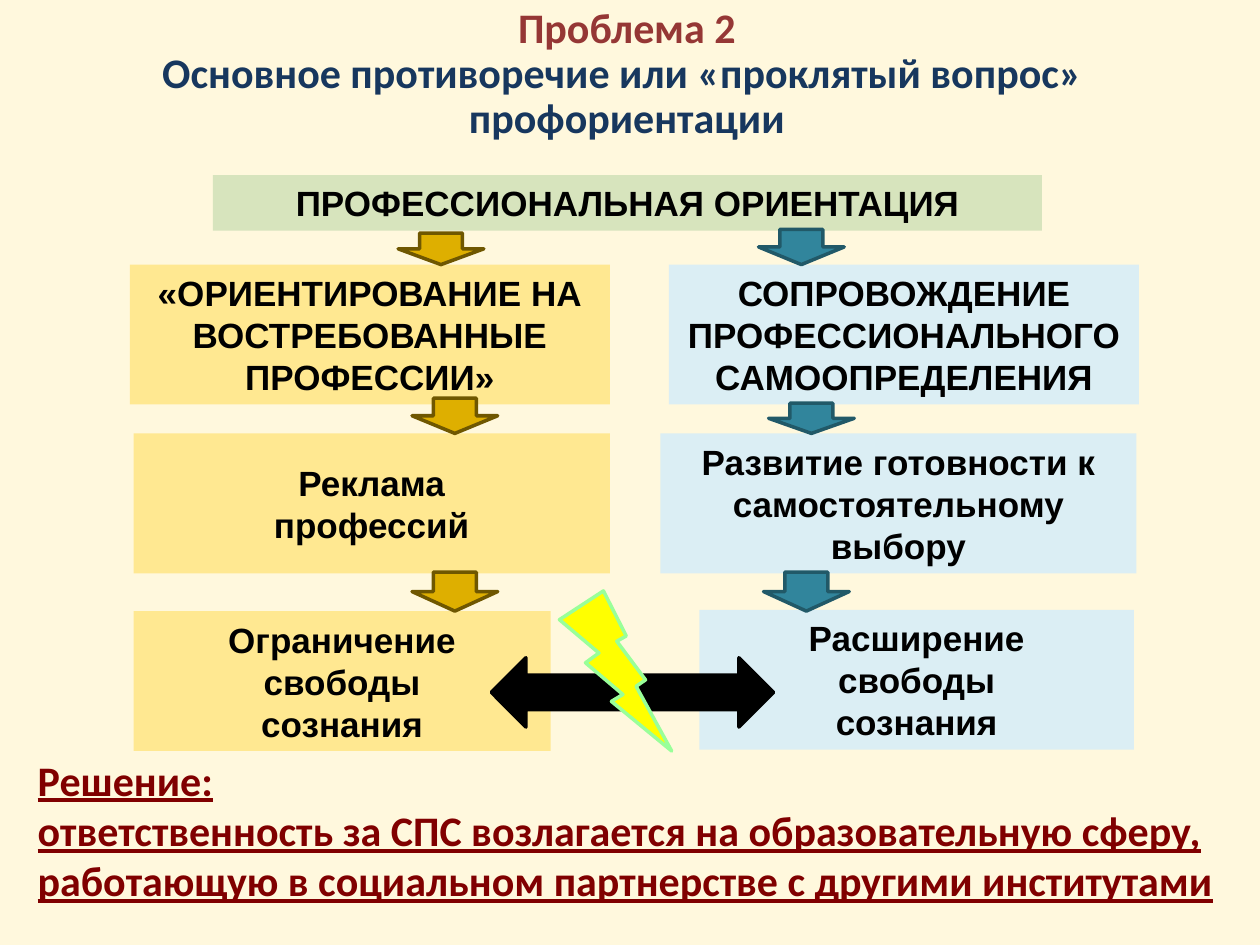
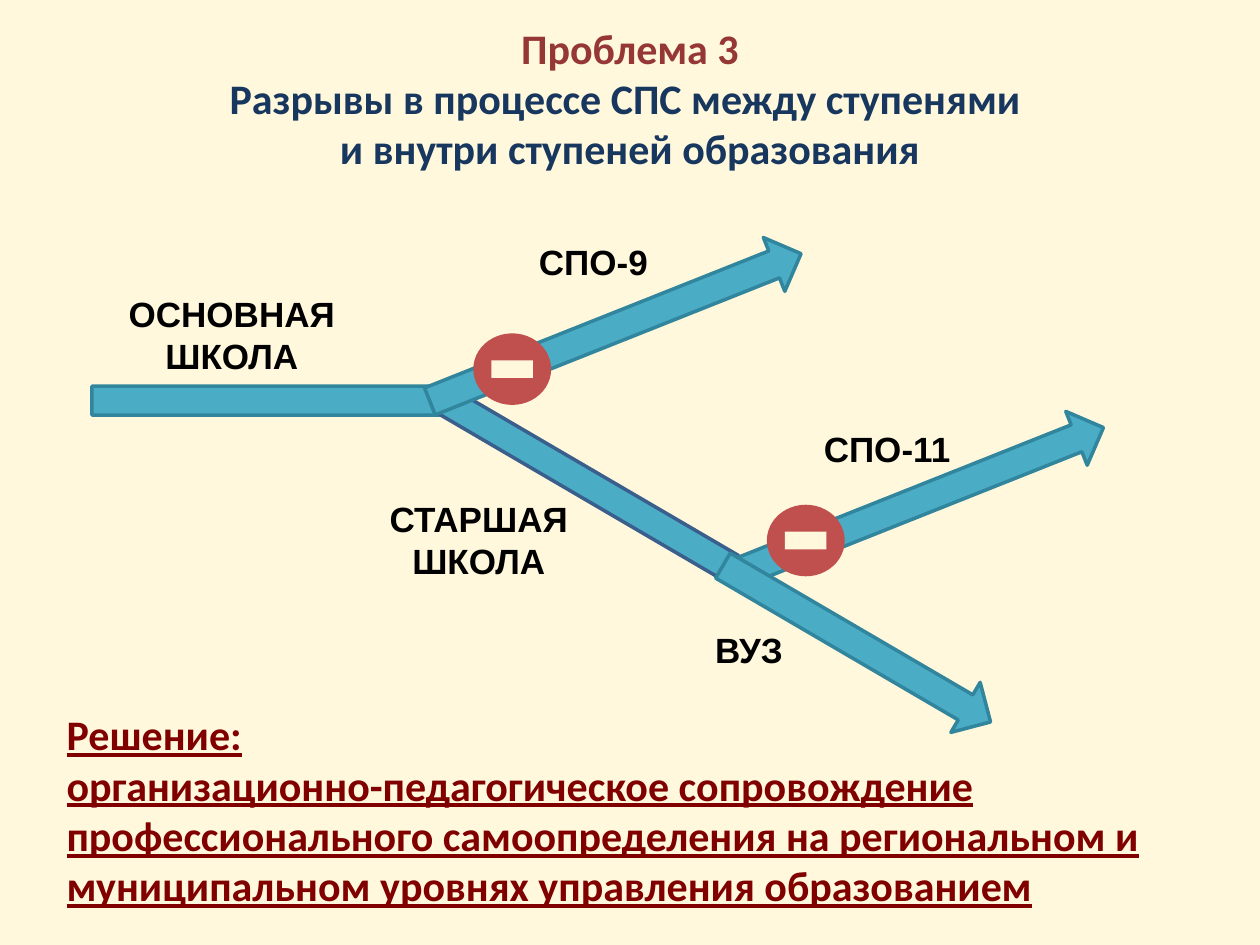
"""Build two slides on the contradictions and gaps in career guidance."""
import typing

import pptx
import pptx.dml.color
import pptx.enum.shapes
import pptx.enum.text
import pptx.util

Inches = pptx.util.Inches
Pt = pptx.util.Pt
SHAPE = pptx.enum.shapes.MSO_SHAPE
ALIGN = pptx.enum.text.PP_ALIGN
ANCHOR = pptx.enum.text.MSO_ANCHOR

CREAM, BLACK = "FFF8DD", "000000"
HEADING_RED, HEADING_NAVY, SOLUTION_RED = "953735", "17375E", "800000"
GREEN, YELLOW, PALE_BLUE = "D7E4BD", "FFE891", "DBEEF4"
GOLD, GOLD_EDGE = "DEAF00", "6F5700"
TEAL, TEAL_EDGE = "31859C", "215968"
ROAD, ROAD_EDGE, STOP_RED = "4BACC6", "31859C", "C0504D"


class Area(typing.NamedTuple):
    """Place and size in inches."""
    left: float
    top: float
    width: float
    height: float


class Style(typing.NamedTuple):
    """Look of a text."""
    font: str
    size: float
    colours: tuple[str, ...]
    align: ALIGN = ALIGN.CENTER
    anchor: ANCHOR = ANCHOR.MIDDLE
    underline: bool = False
    spacing: float = 1.0


class Block(typing.NamedTuple):
    """A filled box with a caption."""
    area: Area
    fill: str
    text: str


class Label(typing.NamedTuple):
    """A caption beside a road."""
    area: Area
    text: str


class Road(typing.NamedTuple):
    """An educational route drawn as a turned arrow."""
    left: float
    top: float
    length: float
    angle: float
    edge: str = ROAD_EDGE


CAPTION = Style("Arial", 20, (BLACK,))
ROAD_CAPTION = CAPTION._replace(anchor=ANCHOR.TOP)
HEADING = Style("Calibri", 24, (HEADING_RED, HEADING_NAVY))
SOLUTION = Style("Calibri", 24, (SOLUTION_RED,), ALIGN.LEFT, underline=True)

STAGES = (
    Block(Area(1.69, 1.39, 6.58, 0.44), GREEN, "ПРОФЕССИОНАЛЬНАЯ ОРИЕНТАЦИЯ"),
    Block(Area(1.03, 2.1, 3.81, 1.11), YELLOW, "«ОРИЕНТИРОВАНИЕ НА ВОСТРЕБОВАННЫЕ ПРОФЕССИИ»"),
    Block(Area(5.31, 2.1, 3.73, 1.11), PALE_BLUE, "СОПРОВОЖДЕНИЕ ПРОФЕССИОНАЛЬНОГО САМООПРЕДЕЛЕНИЯ"),
    Block(Area(1.06, 3.44, 3.78, 1.11), YELLOW, "Реклама\nпрофессий"),
    Block(Area(5.24, 3.44, 3.78, 1.11), PALE_BLUE, "Развитие готовности к самостоятельному выбору"),
    Block(Area(1.06, 4.85, 3.31, 1.11), YELLOW, "Ограничение\nсвободы\nсознания"),
    Block(Area(5.55, 4.84, 3.45, 1.11), PALE_BLUE, "Расширение\nсвободы\nсознания"),
)
STEP_WIDTH = 0.68
GOLD_STEPS = ((3.16, 1.85, 0.25), (3.27, 3.16, 0.28), (3.27, 4.54, 0.31))
TEAL_STEPS = ((6.02, 1.82, 0.28), (6.1, 3.2, 0.24), (6.06, 4.54, 0.31))

ROAD_HEIGHT = 0.46
UPHILL, DOWNHILL = 338.3, 30.3
BASIC_SCHOOL = Road(0.73, 2.95, 3.17, 0)
SENIOR_SCHOOL = Road(3.28, 3.73, 3.17, DOWNHILL, "3A5F8C")
COLLEGE_AFTER_9 = Road(3.3, 2.37, 3.17, UPHILL)
COLLEGE_AFTER_11 = Road(5.7, 3.75, 3.17, UPHILL)
UNIVERSITY = Road(5.57, 4.88, 2.46, DOWNHILL)
ROAD_LABELS = (
    Label(Area(0.84, 2.27, 2, 0.71), "ОСНОВНАЯ ШКОЛА"),
    Label(Area(2.8, 3.9, 2, 0.71), "СТАРШАЯ ШКОЛА"),
    Label(Area(3.71, 1.86, 2, 0.44), "СПО-9"),
    Label(Area(6.04, 3.34, 2, 0.4), "СПО-11"),
    Label(Area(5.41, 4.94, 1.07, 0.4), "ВУЗ"),
)
BARRIERS = ((3.77, 2.66), (6.1, 4.02))


def rgb(colour: str) -> pptx.dml.color.RGBColor:
    """Turn a hex string into a colour."""
    return pptx.dml.color.RGBColor.from_string(colour)


def write(frame, text: str, style: Style) -> None:
    """Fill a frame; the first run takes the first colour, later ones the last."""
    frame.word_wrap = True
    frame.vertical_anchor = style.anchor
    frame.text = text
    for paragraph in frame.paragraphs:
        paragraph.alignment = style.align
        paragraph.line_spacing = style.spacing
        for index, run in enumerate(paragraph.runs):
            run.font.name = style.font
            run.font.size = Pt(style.size)
            run.font.bold = True
            run.font.underline = style.underline
            run.font.color.rgb = rgb(style.colours[min(index, len(style.colours) - 1)])


def add_text(slide, area: Area, text: str, style: Style) -> None:
    """Place free text."""
    box = slide.shapes.add_textbox(*map(Inches, area))
    write(box.text_frame, text, style)


def add_figure(slide, kind: SHAPE, area: Area, fill: str, edge: str | None = None,
               angle: float = 0):
    """Place a flat preset shape."""
    figure = slide.shapes.add_shape(kind, *map(Inches, area))
    figure.shadow.inherit = False
    figure.rotation = angle
    figure.fill.solid()
    figure.fill.fore_color.rgb = rgb(fill)
    if edge:
        figure.line.color.rgb = rgb(edge)
        figure.line.width = Pt(2)
    else:
        figure.line.fill.background()
    return figure


def add_block(slide, block: Block) -> None:
    """Place a filled box with its caption."""
    box = add_figure(slide, SHAPE.RECTANGLE, block.area, block.fill)
    write(box.text_frame, block.text, CAPTION)


def add_road(slide, road: Road) -> None:
    """Place one route arrow."""
    area = Area(road.left, road.top, road.length, ROAD_HEIGHT)
    add_figure(slide, SHAPE.RIGHT_ARROW, area, ROAD, road.edge, road.angle)


def add_road_end(slide, left: float, top: float) -> None:
    """Cover the head of a route that continues."""
    add_figure(slide, SHAPE.RECTANGLE, Area(left, top, 0.5, 0.63), CREAM)


def add_barrier(slide, left: float, top: float) -> None:
    """Place a no-entry sign."""
    add_figure(slide, SHAPE.OVAL, Area(left, top, 0.59, 0.54), STOP_RED, STOP_RED)
    add_figure(slide, SHAPE.RECTANGLE, Area(left + 0.13, top + 0.2, 0.33, 0.14), CREAM)


def add_slide(deck):
    """Add a blank slide on the cream background."""
    slide = deck.slides.add_slide(deck.slide_layouts[6])
    slide.background.fill.solid()
    slide.background.fill.fore_color.rgb = rgb(CREAM)
    return slide


def build_contradiction(deck) -> None:
    """Build the slide on the main contradiction."""
    slide = add_slide(deck)
    for stage in STAGES:
        add_block(slide, stage)
    add_figure(slide, SHAPE.LEFT_RIGHT_ARROW, Area(3.9, 5.22, 2.24, 0.55), BLACK, BLACK)
    add_figure(slide, SHAPE.LIGHTNING_BOLT, Area(4.44, 4.69, 0.89, 1.27), "FFFF00", "99FF99")
    for steps, fill, edge in ((GOLD_STEPS, GOLD, GOLD_EDGE), (TEAL_STEPS, TEAL, TEAL_EDGE)):
        for left, top, height in steps:
            add_figure(slide, SHAPE.DOWN_ARROW, Area(left, top, STEP_WIDTH, height), fill, edge)
    add_text(slide, Area(-0.2, -0.03, 10.35, 1.25),
             "Проблема 2\vОсновное противоречие или «проклятый вопрос» \vпрофориентации",
             HEADING._replace(spacing=0.9))
    add_text(slide, Area(0.2, 5.96, 9.61, 1.25),
             "Решение:\nответственность за СПС возлагается на образовательную сферу, "
             "работающую в социальном партнерстве с другими институтами", SOLUTION)


def build_gaps(deck) -> None:
    """Build the slide on the gaps between stages of education."""
    slide = add_slide(deck)
    add_text(slide, Area(0, 0.29, 10, 0.97),
             "Проблема 3\vРазрывы в процессе СПС между ступенями \vи внутри ступеней образования",
             HEADING)
    add_road(slide, BASIC_SCHOOL)
    add_road_end(slide, 3.57, 2.86)
    add_road(slide, SENIOR_SCHOOL)
    add_road(slide, COLLEGE_AFTER_9)
    add_road_end(slide, 5.87, 4.32)
    add_road(slide, COLLEGE_AFTER_11)
    add_road(slide, UNIVERSITY)
    for label in ROAD_LABELS:
        add_text(slide, label.area, label.text, ROAD_CAPTION)
    for left, top in BARRIERS:
        add_barrier(slide, left, top)
    add_text(slide, Area(0.43, 5.8, 9.37, 1.25),
             "Решение:\nорганизационно-педагогическое сопровождение профессионального "
             "самоопределения на региональном и муниципальном уровнях управления образованием",
             SOLUTION)


def main() -> None:
    """Build and save the deck."""
    deck = pptx.Presentation()
    deck.slide_width, deck.slide_height = Inches(10), Inches(7.5)
    build_contradiction(deck)
    build_gaps(deck)
    deck.save("out.pptx")


if __name__ == "__main__":
    main()
